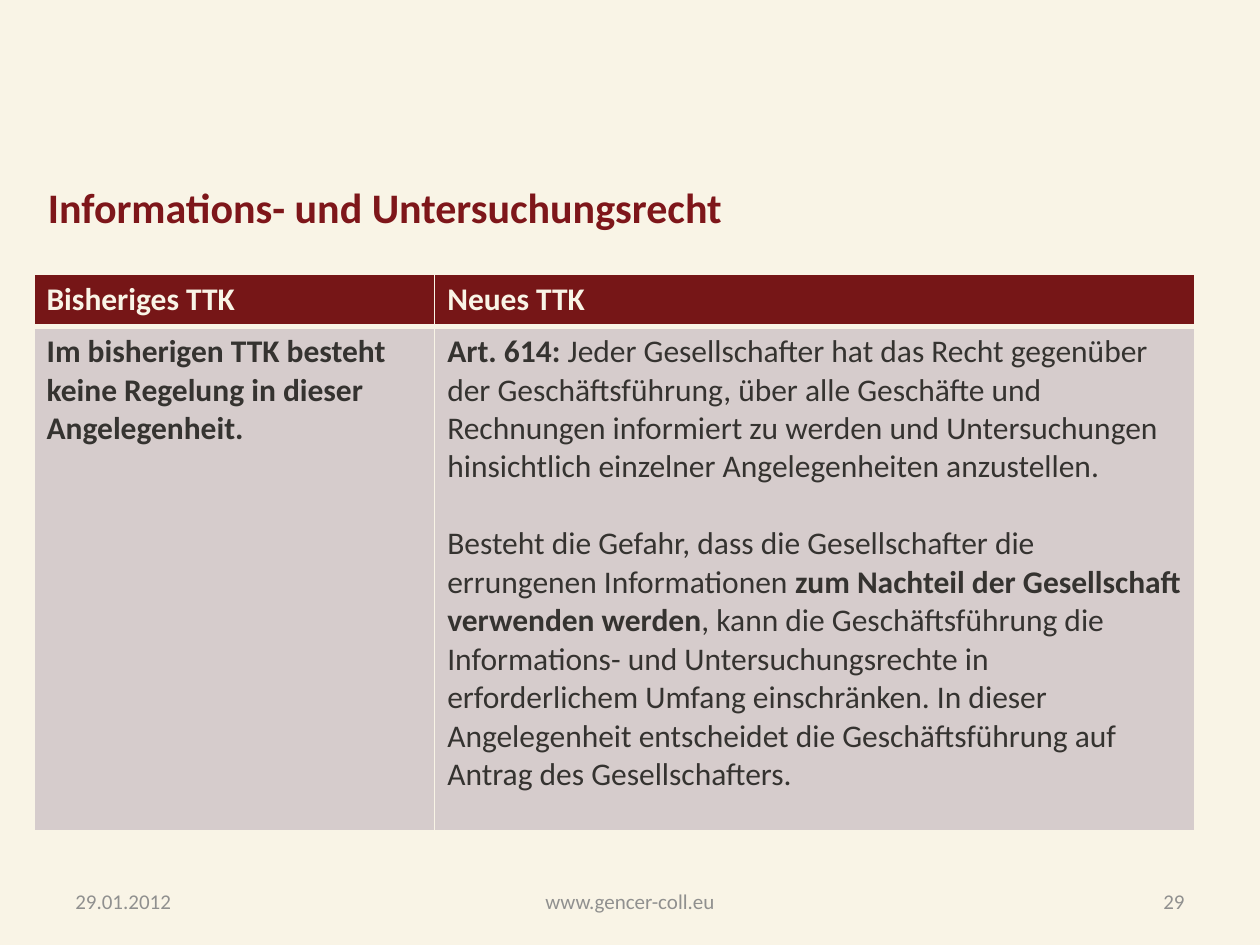
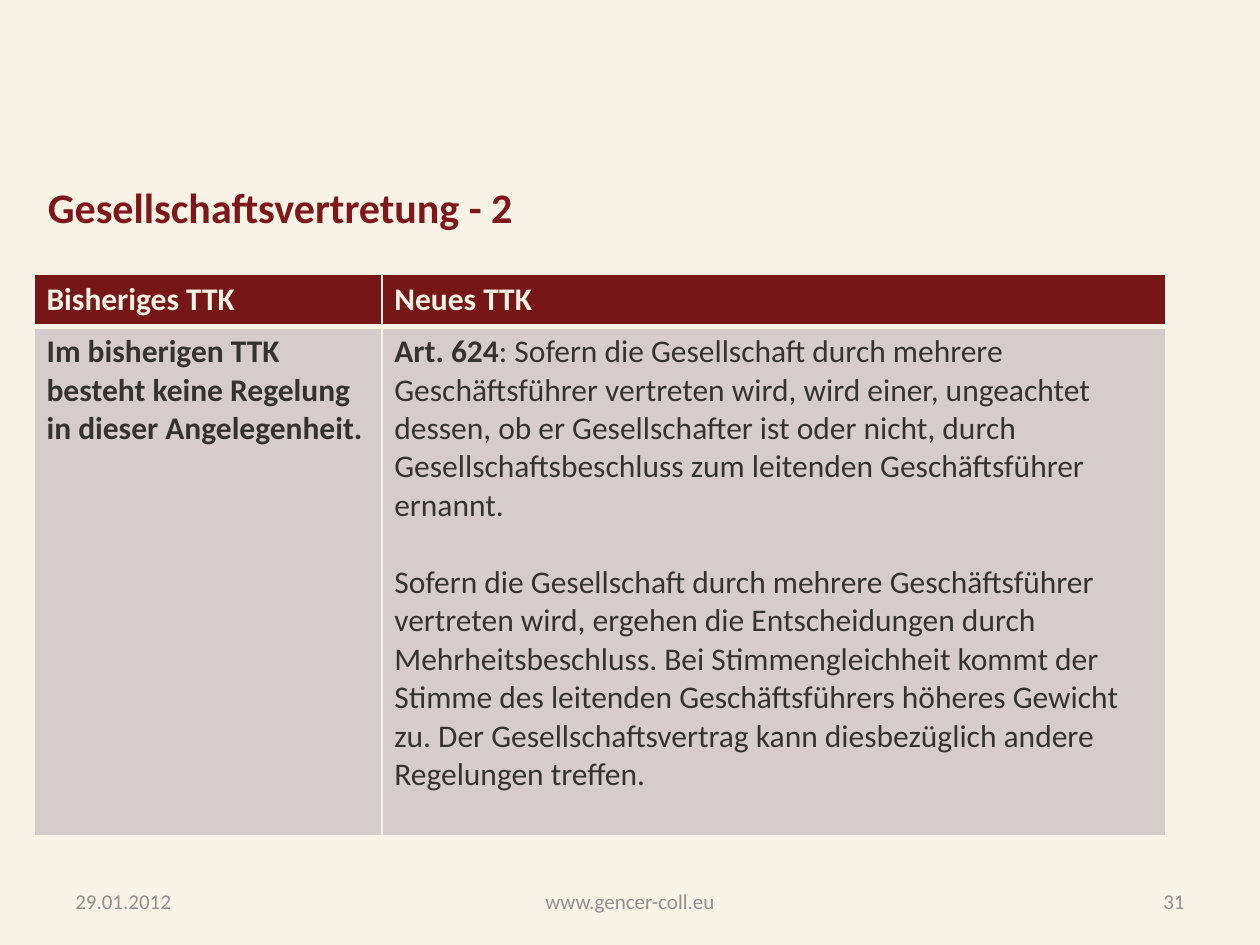
from dataclasses import dataclass

from lxml import etree
from pptx import Presentation
from pptx import util as u
from pptx.dml.color import RGBColor
from pptx.enum import text
from pptx.oxml import ns


@dataclass(frozen=True)
class Theme:
    font: str = "Calibri"
    background: str = "F9F4E6"
    title: str = "7E161A"
    header_fill: str = "761617"
    body_fill: str = "D6CCCC"
    body_text: str = "353330"
    footer_text: str = "90908F"
    title_size: int = 24
    table_size: int = 18
    footer_size: int = 12
    paragraph_gap: int = 22
    thin_border: int = 1
    thick_border: int = 3


@dataclass(frozen=True)
class Box:
    """A region in grid units: the slide has 100 columns and 75 rows."""
    left: float
    top: float
    width: float
    height: float

    def place(self):
        return [grid(value) for value in (self.left, self.top, self.width, self.height)]


def grid(units):
    return u.Inches(units / 10)


THEME = Theme()
TITLE_BOX = Box(2.8, 13.9, 78.7, 4.7)
FOOTER_BOX = Box(5, 69.5, 90, 4)
TABLE_LEFT, TABLE_TOP, HEADER_HEIGHT = 2.7, 21.8, 4.1

DATE, SITE = "29.01.2012", "www.gencer-coll.eu"
HEADINGS = ("Bisheriges TTK", "Neues TTK")
NO_RULE = "Im bisherigen TTK besteht keine Regelung in dieser Angelegenheit."

# Each paragraph is a list of (wording, bold) pieces.
COMPARISONS = [
    dict(
        title="Informations- und Untersuchungsrecht", number=29,
        columns=(31.8, 60.3), body_height=40,
        new_rule=[
            [("Art. 614: ", True),
             ("Jeder Gesellschafter hat das Recht gegenüber der Geschäftsführung, über alle "
              "Geschäfte und Rechnungen informiert zu werden und Untersuchungen hinsichtlich "
              "einzelner Angelegenheiten anzustellen.", False)],
            [("Besteht die Gefahr, dass die Gesellschafter die errungenen Informationen ", False),
             ("zum Nachteil der Gesellschaft verwenden werden", True),
             (", kann die Geschäftsführung die Informations- und Untersuchungsrechte in "
              "erforderlichem Umfang einschränken. In dieser Angelegenheit entscheidet die "
              "Geschäftsführung auf Antrag des Gesellschafters.", False)],
        ],
    ),
    dict(
        title="Gesellschaftsvertretung - 2", number=31,
        columns=(27.6, 62.2), body_height=40.4,
        new_rule=[
            [("Art. 624", True),
             (": Sofern die Gesellschaft durch mehrere Geschäftsführer vertreten wird, wird "
              "einer, ungeachtet dessen, ob er Gesellschafter ist oder nicht, durch "
              "Gesellschaftsbeschluss zum leitenden Geschäftsführer ernannt.", False)],
            [("Sofern die Gesellschaft durch mehrere Geschäftsführer vertreten wird, ergehen "
              "die Entscheidungen durch Mehrheitsbeschluss. Bei Stimmengleichheit kommt der "
              "Stimme des leitenden Geschäftsführers höheres Gewicht zu. Der "
              "Gesellschaftsvertrag kann diesbezüglich andere Regelungen treffen.", False)],
        ],
    ),
]


def format_font(font, size, color, bold=False):
    font.name = THEME.font
    font.size = u.Pt(size)
    font.bold = bold
    font.color.rgb = RGBColor.from_string(color)


def add_title(slide, box, wording):
    title = slide.shapes.title
    title.left, title.top, title.width, title.height = box.place()
    frame = title.text_frame
    frame.text = wording
    frame.auto_size = text.MSO_AUTO_SIZE.NONE
    frame.vertical_anchor = text.MSO_ANCHOR.TOP
    paragraph = frame.paragraphs[0]
    paragraph.alignment = text.PP_ALIGN.LEFT
    format_font(paragraph.runs[0].font, THEME.title_size, THEME.title, bold=True)


def add_footer(slide, box, number):
    """Place date, site and number at the left, centre and right of the box."""
    side, middle = box.width * 0.26, box.width * 0.35
    parts = [
        (DATE, box.left, side, text.PP_ALIGN.LEFT),
        (SITE, box.left + (box.width - middle) / 2, middle, text.PP_ALIGN.CENTER),
        (str(number), box.left + box.width - side, side, text.PP_ALIGN.RIGHT),
    ]
    for wording, left, width, alignment in parts:
        part = Box(left, box.top, width, box.height)
        frame = slide.shapes.add_textbox(*part.place()).text_frame
        frame.word_wrap = True
        frame.vertical_anchor = text.MSO_ANCHOR.MIDDLE
        frame.text = wording
        paragraph = frame.paragraphs[0]
        paragraph.alignment = alignment
        format_font(paragraph.runs[0].font, THEME.footer_size, THEME.footer_text)


def set_borders(cell, top, bottom):
    properties = cell._tc.get_or_add_tcPr()
    widths = {"L": THEME.thin_border, "R": THEME.thin_border, "T": top, "B": bottom}
    for side, width in widths.items():
        line = etree.SubElement(properties, ns.qn(f"a:ln{side}"), w=str(u.Pt(width)))
        fill = etree.SubElement(line, ns.qn("a:solidFill"))
        etree.SubElement(fill, ns.qn("a:srgbClr"), val=THEME.background)


def fill_cell(cell, paragraphs, color, fill):
    cell.fill.solid()
    cell.fill.fore_color.rgb = RGBColor.from_string(fill)
    frame = cell.text_frame
    for index, pieces in enumerate(paragraphs):
        paragraph = frame.add_paragraph() if index else frame.paragraphs[0]
        if index:
            paragraph.space_before = u.Pt(THEME.paragraph_gap)
        for wording, bold in pieces:
            run = paragraph.add_run()
            run.text = wording
            format_font(run.font, THEME.table_size, color, bold)


def add_comparison_table(slide, box, columns, new_rule):
    table = slide.shapes.add_table(2, len(columns), *box.place()).table
    table.horz_banding = False
    for column, width in zip(table.columns, columns):
        column.width = grid(width)
    table.rows[0].height = grid(HEADER_HEIGHT)
    table.rows[1].height = grid(box.height - HEADER_HEIGHT)
    rules = ([[(NO_RULE, True)]], new_rule)
    for index, (heading, rule) in enumerate(zip(HEADINGS, rules)):
        header, body = table.cell(0, index), table.cell(1, index)
        set_borders(header, THEME.thin_border, THEME.thick_border)
        set_borders(body, THEME.thick_border, THEME.thin_border)
        fill_cell(header, [[(heading, True)]], THEME.background, THEME.header_fill)
        fill_cell(body, rule, THEME.body_text, THEME.body_fill)


def add_comparison_slide(presentation, title, number, columns, body_height, new_rule):
    slide = presentation.slides.add_slide(presentation.slide_layouts.get_by_name("Title Only"))
    add_footer(slide, FOOTER_BOX, number)
    add_title(slide, TITLE_BOX, title)
    table_box = Box(TABLE_LEFT, TABLE_TOP, sum(columns), HEADER_HEIGHT + body_height)
    add_comparison_table(slide, table_box, columns, new_rule)


def main():
    presentation = Presentation()
    presentation.slide_width, presentation.slide_height = grid(100), grid(75)
    background = presentation.slide_master.background.fill
    background.solid()
    background.fore_color.rgb = RGBColor.from_string(THEME.background)
    for comparison in COMPARISONS:
        add_comparison_slide(presentation, **comparison)
    presentation.save("out.pptx")


if __name__ == "__main__":
    main()
